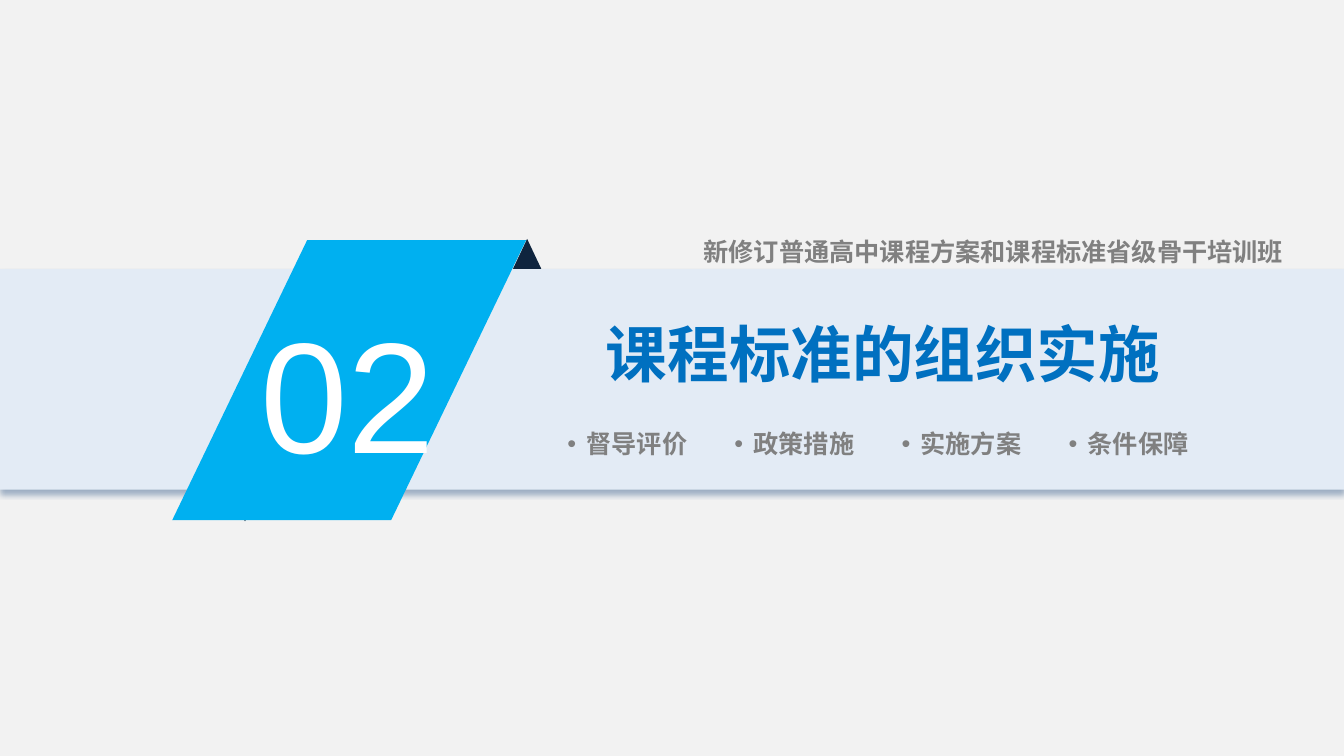
from dataclasses import dataclass, field

from lxml import etree
from pptx import Presentation
from pptx.dml.color import RGBColor
from pptx.enum.shapes import MSO_SHAPE
from pptx.enum.text import MSO_ANCHOR, PP_ALIGN
from pptx.oxml.ns import qn
from pptx.util import Cm, Pt

TRI, RECT, SLANT = MSO_SHAPE.ISOSCELES_TRIANGLE, MSO_SHAPE.RECTANGLE, MSO_SHAPE.PARALLELOGRAM
TOP, MIDDLE = MSO_ANCHOR.TOP, MSO_ANCHOR.MIDDLE
LEFT, CENTER = PP_ALIGN.LEFT, PP_ALIGN.CENTER

HUES = {
    "back": "F2F2F2", "fold": "0F243E", "band": "E3EBF5", "shade": "1F497D",
    "badge": "00B0F0", "white": "FFFFFF", "title": "0070C0", "gray": "808080",
}
SANS = "Noto Sans CJK SC"
TOPICS = ("督导评价", "政策措施", "实施方案", "条件保障")
TOPIC_LEFT, TOPIC_STEP = 12.37, 4.21
NO_INSET = {"margin_left": 0, "margin_right": 0, "margin_top": 0, "margin_bottom": 0}


@dataclass
class Block:
    kind: int
    box: tuple
    hue: str
    turn: int = 0
    slant: float = 0
    shade: bool = False


@dataclass
class Label:
    text: str
    box: tuple
    size: float
    hue: str = "gray"
    font: str = SANS
    bold: bool = True
    frame: dict = field(default_factory=dict)
    para: dict = field(default_factory=dict)
    dot: bool = False


def color(name: str) -> RGBColor:
    return RGBColor.from_string(HUES[name])


def assign(target, values: dict) -> None:
    for name, value in values.items():
        setattr(target, name, value)


def cast(shape) -> None:
    effects = shape.element.spPr.find(qn("a:effectLst"))
    outer = etree.SubElement(effects, qn("a:outerShdw"), blurRad=str(Pt(4)),
                             dist=str(Pt(3)), dir="5400000", rotWithShape="0")
    tint = etree.SubElement(outer, qn("a:srgbClr"), val=HUES["shade"])
    etree.SubElement(tint, qn("a:alpha"), val="40000")


def draw(slide, block: Block) -> None:
    shape = slide.shapes.add_shape(block.kind, *map(Cm, block.box))
    shape.shadow.inherit = False
    shape.fill.solid()
    shape.fill.fore_color.rgb = color(block.hue)
    shape.line.fill.background()
    shape.rotation = block.turn
    if block.slant:
        shape.adjustments[0] = block.slant
    if block.shade:
        cast(shape)


def write(slide, label: Label) -> None:
    frame = slide.shapes.add_textbox(*map(Cm, label.box)).text_frame
    assign(frame, {"word_wrap": True, "vertical_anchor": MIDDLE, **label.frame})
    para = frame.paragraphs[0]
    assign(para, {"alignment": LEFT, **label.para})
    run = para.add_run()
    run.text = label.text
    assign(run.font, {"size": Pt(label.size), "bold": label.bold, "name": label.font})
    run.font.color.rgb = color(label.hue)
    etree.SubElement(run.font._element, qn("a:ea"), typeface=label.font)
    if label.dot:
        props = para._p.get_or_add_pPr()
        props.set("marL", str(Cm(0.48)))
        props.set("indent", str(Cm(-0.48)))
        etree.SubElement(props, qn("a:buFont"), typeface="Arial")
        etree.SubElement(props, qn("a:buChar"), char="•")


BLOCKS = (
    Block(TRI, (11.76, 6.02, 3.05, 3.23), "fold"),
    Block(TRI, (4.65, 9.91, 3.05, 3.23), "fold", turn=180),
    Block(RECT, (0, 6.78, 33.87, 5.56), "band", shade=True),
    Block(SLANT, (4.34, 6.05, 8.92, 7.06), "badge", slant=0.482),
)
LABELS = (
    Label("02", (6.32, 7.09, 4.9, 4.8), 112.5, "white", "Arial", False,
          {**NO_INSET, "margin_top": Cm(0.38), "vertical_anchor": TOP},
          {"alignment": CENTER}),
    Label("课程标准的组织实施", (15.27, 7.95, 14.53, 1.88), 44, "title", frame=NO_INSET),
    Label("新修订普通高中课程方案和课程标准省级骨干培训班", (17.48, 5.36, 15.27, 1.4), 18,
          frame={"word_wrap": False}, para={"line_spacing": 1.7}),
    *(Label(topic, (TOPIC_LEFT + i * TOPIC_STEP, 10.67, 6.88, 1.02), 18,
            para={"alignment": CENTER, "level": 1}, dot=True)
      for i, topic in enumerate(TOPICS)),
)


def main() -> None:
    deck = Presentation()
    assign(deck, {"slide_width": Cm(33.87), "slide_height": Cm(19.05)})
    slide = deck.slides.add_slide(deck.slide_layouts[6])
    slide.background.fill.solid()
    slide.background.fill.fore_color.rgb = color("back")
    for block in BLOCKS:
        draw(slide, block)
    for label in LABELS:
        write(slide, label)
    deck.save("out.pptx")


if __name__ == "__main__":
    main()
